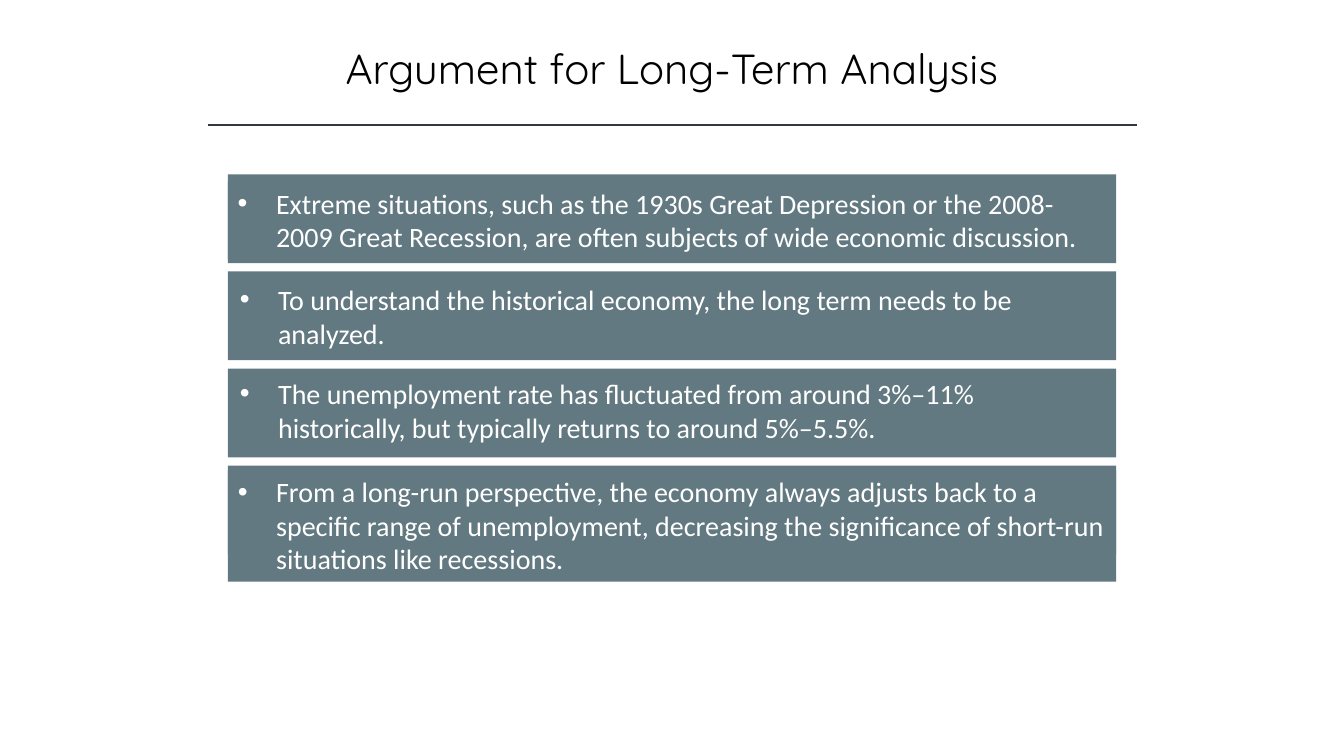
from lxml.etree import SubElement
from pptx import Presentation
from pptx.dml.color import RGBColor
from pptx.enum.shapes import MSO_CONNECTOR as Connector, MSO_SHAPE as Shape
from pptx.enum.text import MSO_ANCHOR as Anchor, MSO_AUTO_SIZE as AutoSize, PP_ALIGN as Align
from pptx.oxml.ns import qn
from pptx.util import Inches, Pt

SLATE = RGBColor(0x62, 0x79, 0x81)
RULE = RGBColor(0x32, 0x35, 0x42)
BLACK = RGBColor(0, 0, 0)
WHITE = RGBColor(0xFF, 0xFF, 0xFF)

PAGE_WIDTH, PAGE_HEIGHT = 13.33, 7.5
BAR_LEFT, BAR_TOP, BAR_WIDTH, BAR_HEIGHT = 2.26, 1.73, 8.81, 0.88
BAR_PITCH = 2.89 / 3
INDENT = 0.38

# Wording, then the text's offset from its bar, its width and its height
POINTS = [
    ("Extreme situations, such as the 1930s Great Depression or the 2008-2009 Great Recession, "
     "are often subjects of wide economic discussion.", 0, 0.07, 8.54, 0.77),
    ("To understand the historical economy, the long term needs to be analyzed.",
     0.02, 0.06, 8.5, 0.77),
    ("The unemployment rate has fluctuated from around 3%–11% historically, "
     "but typically returns to around 5%–5.5%.", 0.02, 0.03, 8.78, 0.77),
    ("From a long-run perspective, the economy always adjusts back to a specific range of "
     "unemployment, decreasing the significance of short-run situations like recessions.",
     0, 0.04, 8.81, 1.11),
]


def inches(*lengths):
    return [Inches(length) for length in lengths]


def write(box, text, font, size, color):
    """Fill the box with one paragraph and return that paragraph."""
    frame = box.text_frame
    frame.word_wrap = True
    frame.auto_size = AutoSize.SHAPE_TO_FIT_TEXT
    frame.vertical_anchor = Anchor.TOP
    para = frame.paragraphs[0]
    span = para.add_run()
    span.text = text
    span.font.name = font
    span.font.size = Pt(size)
    span.font.color.rgb = color
    return para


def add_bullet(para):
    properties = para._p.get_or_add_pPr()
    properties.set("marL", str(Inches(INDENT)))
    properties.set("indent", str(-Inches(INDENT)))
    SubElement(properties, qn("a:buFont")).set("typeface", "Arial")
    SubElement(properties, qn("a:buChar")).set("char", "•")


def add_title(page, text):
    box = page.shapes.add_textbox(*inches(PAGE_WIDTH / 8, 0.37, PAGE_WIDTH * 3 / 4, 0.61))
    write(box, text, "Quicksand", 30, BLACK).alignment = Align.CENTER


def add_rule(page, left, right, top):
    rule = page.shapes.add_connector(Connector.STRAIGHT, *inches(left, top, right, top))
    rule.line.color.rgb = RULE
    rule.line.width = Pt(1)
    SubElement(rule._element.spPr, qn("a:effectLst"))


def add_point(page, row, text, shift, drop, width, height):
    """Group a slate bar with the bulleted text that lies on it."""
    top = BAR_TOP + row * BAR_PITCH
    group = page.shapes.add_group_shape()
    bar = group.shapes.add_shape(
        Shape.RECTANGLE, *inches(BAR_LEFT, top, BAR_WIDTH, BAR_HEIGHT))
    bar.shadow.inherit = False
    box = group.shapes.add_textbox(*inches(BAR_LEFT + shift, top + drop, width, height))
    for part in (bar, box):
        part.fill.solid()
        part.fill.fore_color.rgb = SLATE
        part.line.fill.background()
    add_bullet(write(box, text, "Calibri", 20, WHITE))


def main():
    deck = Presentation()
    deck.slide_width, deck.slide_height = inches(PAGE_WIDTH, PAGE_HEIGHT)
    page = deck.slides.add_slide(deck.slide_layouts[6])
    add_title(page, "Argument for Long-Term Analysis")
    add_rule(page, 2.06, 11.28, 1.24)
    for row, point in enumerate(POINTS):
        add_point(page, row, *point)
    deck.save("out.pptx")


if __name__ == "__main__":
    main()
